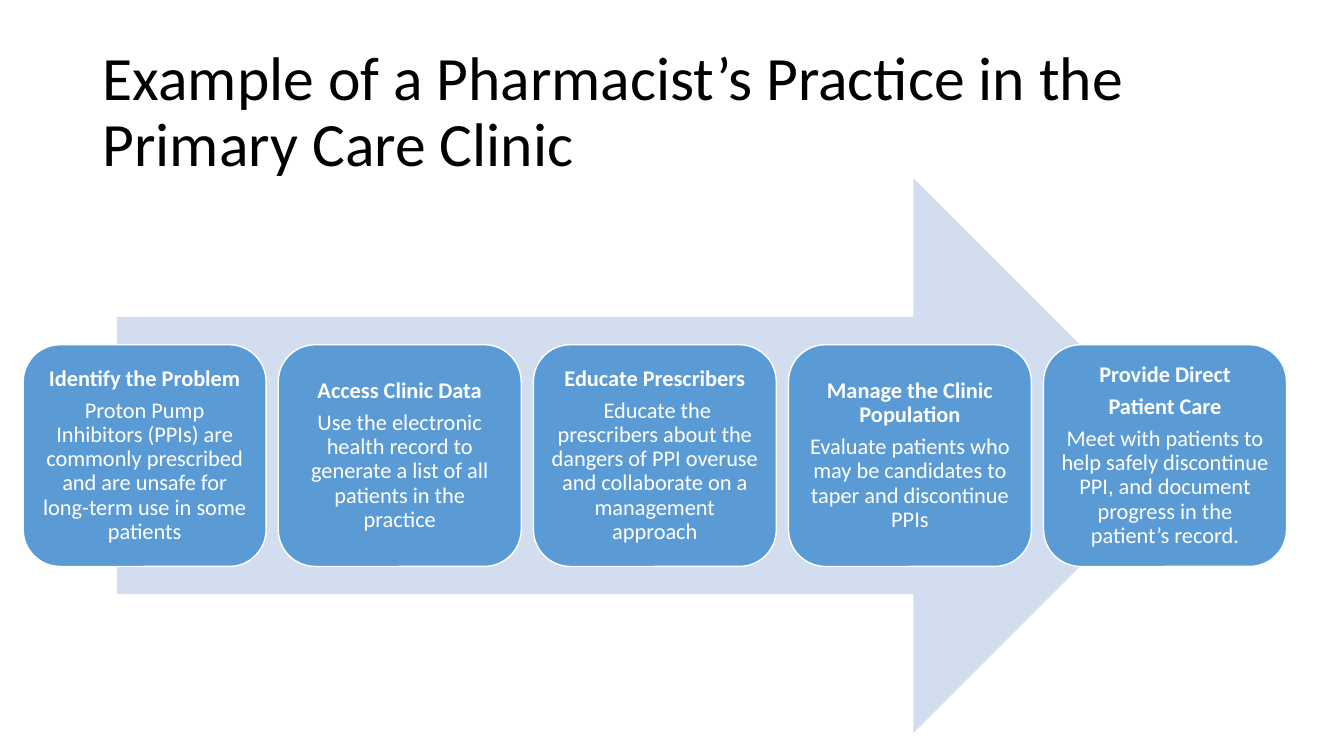
from pptx import Presentation
from pptx.dml.color import RGBColor
from pptx.enum.shapes import MSO_SHAPE
from pptx.enum.text import MSO_ANCHOR, PP_ALIGN
from pptx.util import Inches, Pt

ARROW, ROUNDED = MSO_SHAPE.RIGHT_ARROW, MSO_SHAPE.ROUNDED_RECTANGLE
MIDDLE = MSO_ANCHOR.MIDDLE
LEFT, CENTER = PP_ALIGN.LEFT, PP_ALIGN.CENTER

FONT = "Calibri"
WHITE, BLACK, BLUE, PALE_BLUE = "FFFFFF", "000000", "5B9BD5", "D2DEEF"

# Step cards: one row of equal columns, in inches
FIRST_LEFT, COLUMN_PITCH = 0.23, 2.53
CARD_TOP, CARD_WIDTH, CARD_HEIGHT = 3.42, 2.41, 2.2

TITLE = "Example of a Pharmacist’s Practice in the Primary Care Clinic"
# Each step: heading lines, then the description
STEPS = [
    (["Identify the Problem"],
     "Proton Pump Inhibitors (PPIs) are commonly prescribed and are unsafe "
     "for long-term use in some patients"),
    (["Access Clinic Data"],
     "Use the electronic health record to generate a list of all patients "
     "in the practice"),
    (["Educate Prescribers"],
     " Educate the prescribers about the dangers of PPI overuse and "
     "collaborate on a management approach"),
    (["Manage the Clinic Population"],
     "Evaluate patients who may be candidates to taper and discontinue PPIs"),
    (["Provide Direct", "Patient Care"],
     "Meet with patients to help safely discontinue PPI, and document "
     "progress in the patient’s record."),
]


def color(value):
    return RGBColor.from_string(value)


def apply(target, formats):
    for name, value in formats.items():
        setattr(target, name, value)


def write(frame, lines, size, ink, align, inset_x, inset_y, space_after):
    """Fill a text frame with (text, bold) paragraphs."""
    apply(frame, {
        "word_wrap": True, "vertical_anchor": MIDDLE,
        "margin_left": Inches(inset_x), "margin_right": Inches(inset_x),
        "margin_top": Inches(inset_y), "margin_bottom": Inches(inset_y),
    })
    for index, (text, bold) in enumerate(lines):
        para = frame.add_paragraph() if index else frame.paragraphs[0]
        apply(para, {"alignment": align, "line_spacing": 0.9,
                     "space_before": Pt(0), "space_after": Pt(space_after)})
        span = para.add_run()
        span.text = text
        apply(span.font, {"name": FONT, "size": Pt(size), "bold": bold})
        span.font.color.rgb = color(ink)


def add_title(page, text):
    box = page.shapes.add_textbox(*map(Inches, (0.92, 0.4, 11.5, 1.45)))
    write(box.text_frame, [(text, False)], 44, BLACK, LEFT, 0.1, 0.05, 0)


def add_filled(page, kind, place, fill, outline=None):
    shape = page.shapes.add_shape(kind, *map(Inches, place))
    shape.shadow.inherit = False
    shape.fill.solid()
    shape.fill.fore_color.rgb = color(fill)
    if outline:
        shape.line.color.rgb = color(outline)
        shape.line.width = Pt(1)
    else:
        shape.line.fill.background()
    return shape


def add_step(page, column, headings, description):
    left = FIRST_LEFT + column * COLUMN_PITCH
    card = add_filled(page, ROUNDED, (left, CARD_TOP, CARD_WIDTH, CARD_HEIGHT),
                      BLUE, WHITE)
    lines = [(heading, True) for heading in headings] + [(description, False)]
    write(card.text_frame, lines, 16, WHITE, CENTER, 0.07, 0.07, 5.6)


def main():
    deck = Presentation()
    deck.slide_width, deck.slide_height = Inches(13.33), Inches(7.5)
    page = deck.slides.add_slide(deck.slide_layouts[6])
    add_title(page, TITLE)
    add_filled(page, ARROW, (1.16, 1.77, 10.65, 5.5), PALE_BLUE)
    for column, (headings, description) in enumerate(STEPS):
        add_step(page, column, headings, description)
    deck.save("out.pptx")


if __name__ == "__main__":
    main()
